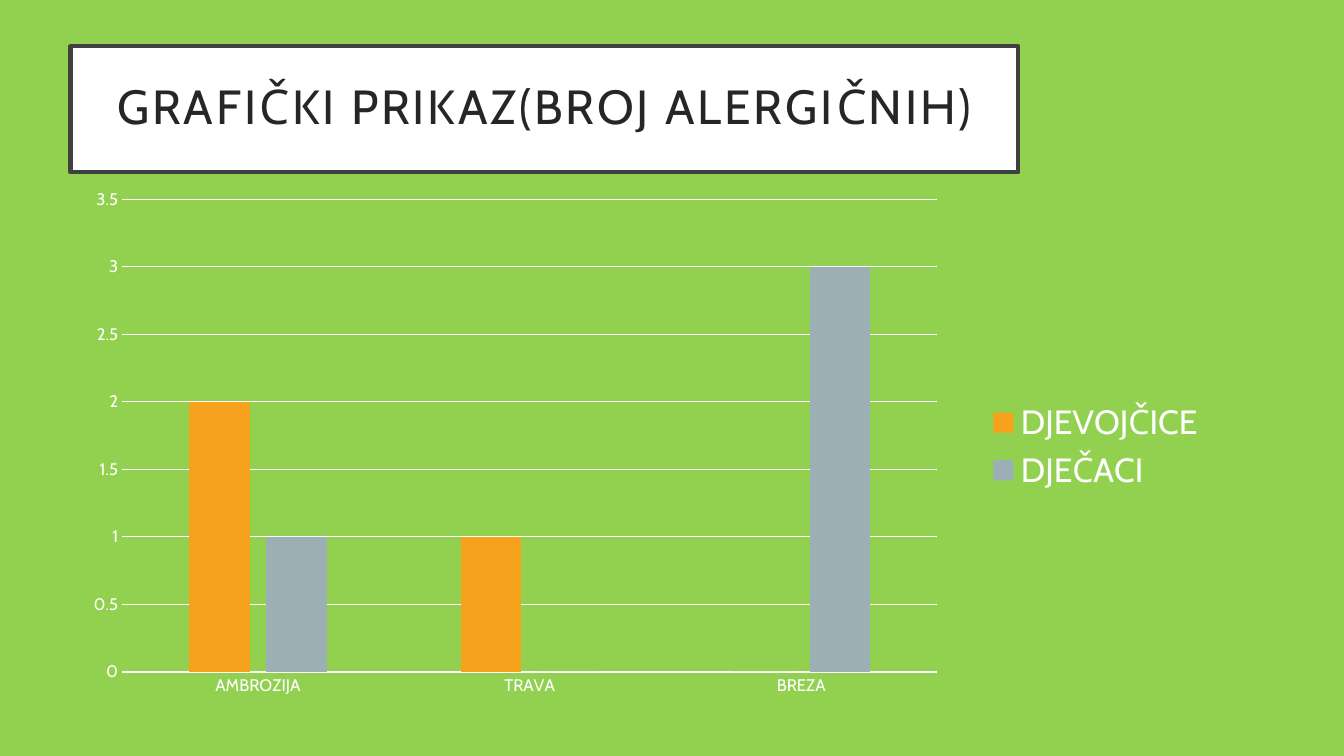
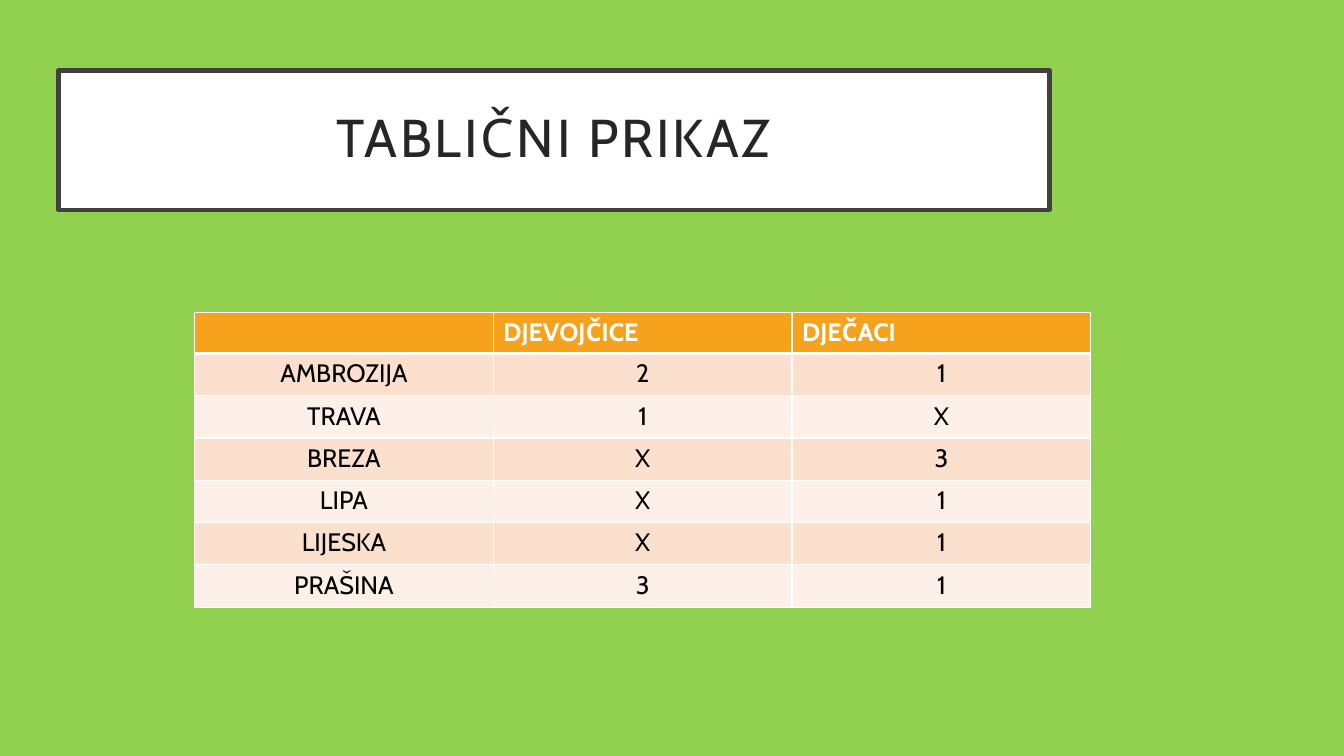
import pptx
import pptx.chart.data
import pptx.dml.color
import pptx.enum.chart
import pptx.enum.text
import pptx.oxml
import pptx.oxml.ns
import pptx.util
from pptx.dml.color import RGBColor
from pptx.util import Inches, Pt

# Shared look
GREEN = RGBColor(0x92, 0xD0, 0x50)
WHITE = RGBColor(0xFF, 0xFF, 0xFF)
BLACK = RGBColor(0x00, 0x00, 0x00)
INK = RGBColor(0x26, 0x26, 0x26)
FRAME = RGBColor(0x40, 0x40, 0x40)
ORANGE = RGBColor(0xF6, 0xA2, 0x1D)
GREY = RGBColor(0x9B, 0xAF, 0xB5)
ROW_TINTS = (RGBColor(0xFB, 0xE0, 0xCD), RGBColor(0xFD, 0xF0, 0xE8))
FONT = "Cabin"
CENTER = pptx.enum.text.PP_ALIGN.CENTER

# Content
GROUPS = ("DJEVOJČICE", "DJEČACI")
CHART_CATEGORIES = ("AMBROZIJA", "TRAVA", "BREZA")
CHART_SERIES = ((2, 1, 0), (1, 0, 3))
TABLE_ROWS = (
    ("", *GROUPS),
    ("AMBROZIJA", "2", "1"),
    ("TRAVA", "1", "X"),
    ("BREZA", "X", "3"),
    ("LIPA", "X", "1"),
    ("LIJESKA", "X", "1"),
    ("PRAŠINA", "3", "1"),
)


def apply(target, values):
    for name, value in values.items():
        setattr(target, name, value)


def style_font(font, size, color, bold=False):
    apply(font, {"name": FONT, "size": Pt(size), "bold": bold})
    font.color.rgb = color


def style_line(line, color, width):
    line.color.rgb = color
    line.width = Pt(width)


def fill_solid(fill, color):
    fill.solid()
    fill.fore_color.rgb = color


def add_titled_page(deck, text, place, size):
    """Add a title-only page with its framed white title box."""
    page = deck.slides.add_slide(deck.slide_layouts[5])
    title = page.shapes.title
    apply(title, dict(zip(("left", "top", "width", "height"), map(Inches, place))))
    fill_solid(title.fill, WHITE)
    style_line(title.line, FRAME, 3)

    apply(title.text_frame, {
        "word_wrap": True,
        "auto_size": pptx.enum.text.MSO_AUTO_SIZE.NONE,
        "vertical_anchor": pptx.enum.text.MSO_ANCHOR.MIDDLE,
        "margin_left": Inches(0.3), "margin_right": Inches(0.3),
        "margin_top": Inches(0.2), "margin_bottom": Inches(0.2),
    })
    para = title.text_frame.paragraphs[0]
    apply(para, {"alignment": CENTER, "line_spacing": 0.9})
    span = para.add_run()
    span.text = text
    style_font(span.font, size, INK)
    span.font._element.set("spc", "200")
    return page


def place_plot(chart, x, y, width, height):
    """Fix the inner plot area, as fractions of the chart."""
    parts = "".join(
        f'<c:{tag} val="{value}"/>' for tag, value in (
            ("layoutTarget", "inner"), ("xMode", "edge"), ("yMode", "edge"),
            ("x", x), ("y", y), ("w", width), ("h", height)))
    layout = pptx.oxml.parse_xml(
        f'<c:layout {pptx.oxml.ns.nsdecls("c")}>'
        f"<c:manualLayout>{parts}</c:manualLayout></c:layout>")
    plot_area = chart.plots[0]._element.getparent()
    for old in plot_area.findall(pptx.oxml.ns.qn("c:layout")):
        plot_area.remove(old)
    plot_area.insert(0, layout)


def add_column_chart(page, place):
    data = pptx.chart.data.CategoryChartData()
    data.categories = CHART_CATEGORIES
    for name, values in zip(GROUPS, CHART_SERIES):
        data.add_series(name, values)
    chart = page.shapes.add_chart(
        pptx.enum.chart.XL_CHART_TYPE.COLUMN_CLUSTERED,
        *map(Inches, place), data).chart
    style_font(chart.font, 10, WHITE)
    apply(chart, {"has_title": False, "has_legend": True})

    # Columns
    plot = chart.plots[0]
    apply(plot, {"gap_width": 219, "overlap": -27, "vary_by_categories": False})
    for series, color in zip(plot.series, (ORANGE, GREY)):
        fill_solid(series.format.fill, color)
    place_plot(chart, 0.045, 0.032, 0.711, 0.895)

    # Axes
    for axis in (chart.category_axis, chart.value_axis):
        axis.major_tick_mark = pptx.enum.chart.XL_TICK_MARK.NONE
        style_font(axis.tick_labels.font, 12, WHITE)
    style_line(chart.category_axis.format.line, WHITE, 0.75)
    apply(chart.value_axis, {
        "minimum_scale": 0, "maximum_scale": 3.5, "major_unit": 0.5})
    chart.value_axis.format.line.fill.background()
    style_line(chart.value_axis.major_gridlines.format.line, WHITE, 0.75)

    # Legend
    apply(chart.legend, {
        "position": pptx.enum.chart.XL_LEGEND_POSITION.RIGHT,
        "include_in_layout": False})
    style_font(chart.legend.font, 24, WHITE)


def add_borders(cell, widths):
    """Draw white cell borders; widths are points by side letter."""
    properties = cell._tc.get_or_add_tcPr()
    for side, width in widths.items():
        properties.append(pptx.oxml.parse_xml(
            f'<a:ln{side} {pptx.oxml.ns.nsdecls("a")} w="{Pt(width)}">'
            f'<a:solidFill><a:srgbClr val="{WHITE}"/></a:solidFill></a:ln{side}>'))


def format_cell(cell, text, row):
    header = row == 0
    add_borders(cell, {"L": 1, "R": 1, "T": 3 if row == 1 else 1,
                       "B": 3 if header else 1})
    fill_solid(cell.fill, ORANGE if header else ROW_TINTS[(row - 1) % 2])
    para = cell.text_frame.paragraphs[0]
    if not header:
        para.alignment = CENTER
    if text:
        span = para.add_run()
        span.text = text
        style_font(span.font, 18, WHITE if header else BLACK, header)


def add_table(page, place):
    table = page.shapes.add_table(
        len(TABLE_ROWS), len(TABLE_ROWS[0]), *map(Inches, place)).table
    for row, texts in enumerate(TABLE_ROWS):
        table.rows[row].height = Inches(0.42 if row else 0.4)
        for column, text in enumerate(texts):
            format_cell(table.cell(row, column), text, row)


def main():
    deck = pptx.Presentation()
    apply(deck, {"slide_width": Inches(13.33), "slide_height": Inches(7.5)})
    fill_solid(deck.slide_master.background.fill, GREEN)

    # Chart page
    page = add_titled_page(deck, "GRAFIČKI PRIKAZ(BROJ ALERGIČNIH)",
                           (0.7, 0.46, 9.4, 1.25), 34.2)
    add_column_chart(page, (0.7, 1.81, 11.37, 5.24))

    # Table page
    page = add_titled_page(deck, "TABLIČNI PRIKAZ", (0.58, 0.7, 9.83, 1.38), 38)
    add_table(page, (1.93, 3.1, 8.89, 2.92))

    deck.save("out.pptx")


if __name__ == "__main__":
    main()
